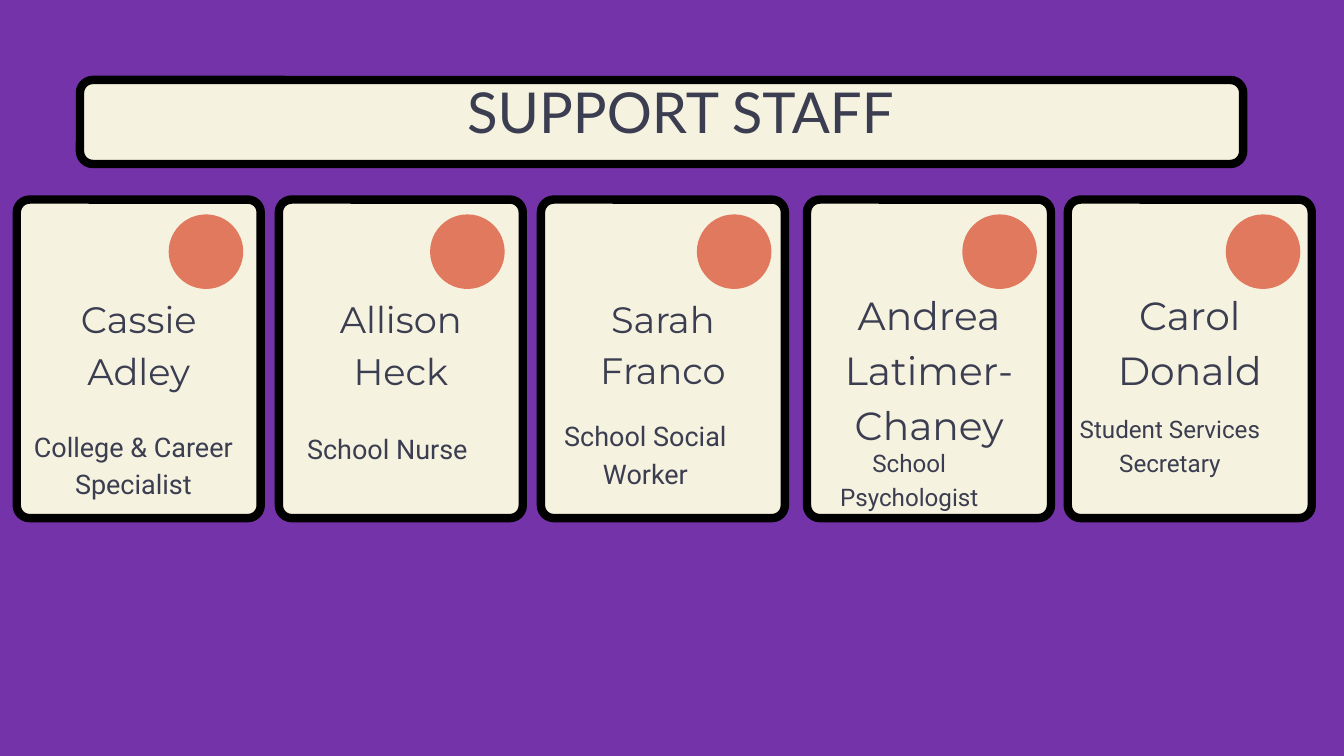
from collections import namedtuple

from pptx import Presentation
from pptx.dml.color import RGBColor
from pptx.enum.shapes import MSO_SHAPE as Shape
from pptx.enum.text import MSO_ANCHOR as Anchor, MSO_AUTO_SIZE as AutoSize, PP_ALIGN as Align
from pptx.util import Inches, Pt

PURPLE = RGBColor(0x75, 0x33, 0xA9)
CREAM = RGBColor(0xF5, 0xF2, 0xDF)
CORAL = RGBColor(0xE0, 0x79, 0x5D)
INK = RGBColor(0x3B, 0x3D, 0x50)
BLACK = RGBColor(0, 0, 0)

LEADING = 1.4  # line pitch as a multiple of the text size
CORNER = 0.19
FRAME_WIDTH = 9
DOT_SIZE = 1.11
CARD_TOP, CARD_WIDTH, CARD_HEIGHT = 2.97, 3.63, 4.74

Box = namedtuple("Box", "left top width height")
# The dot, name and role boxes are measured from the card's top left corner
Card = namedtuple("Card", "left dot name_text name_size name role_text role_size role")

SHORT_NAME = Box(0.65, 1.34, 2.33, 1.51)
LONG_NAME = Box(0.51, 1.25, 2.61, 2.4)

CARDS = [
    Card(0.25, 2.26, "Cassie Adley", 39.4, SHORT_NAME,
         "College & Career Specialist", 28.9, Box(0.1, 3.35, 3.27, 1.1)),
    Card(4.15, 2.25, "Allison Heck", 39.4, SHORT_NAME,
         "School Nurse", 28.9, Box(-0.02, 3.39, 3.27, 0.54)),
    Card(8.05, 2.32, "Sarah Franco", 39.3, SHORT_NAME,
         "School Social Worker", 28.9, Box(-0.08, 3.19, 3.27, 1.1)),
    Card(12.01, 2.31, "Andrea Latimer-Chaney", 42, LONG_NAME,
         "School Psychologist", 25.9, Box(0.06, 3.63, 2.92, 0.99)),
    Card(15.89, 2.35, "Carol Donald", 42, LONG_NAME._replace(height=1.59),
         "Student Services Secretary", 25.9, Box(0.06, 3.12, 2.92, 0.99)),
]


def emu(box):
    return [Inches(length) for length in box]


def within(card_box, part):
    return part._replace(left=card_box.left + part.left, top=card_box.top + part.top)


def add_panel(slide, box):
    """Cream rounded panel with a thick black frame."""
    panel = slide.shapes.add_shape(Shape.ROUNDED_RECTANGLE, *emu(box))
    panel.adjustments[0] = CORNER / min(box.width, box.height)
    panel.shadow.inherit = False
    panel.fill.solid()
    panel.fill.fore_color.rgb = CREAM
    panel.line.color.rgb = BLACK
    panel.line.width = Pt(FRAME_WIDTH)


def add_dot(slide, box):
    dot = slide.shapes.add_shape(Shape.OVAL, *emu(box))
    dot.shadow.inherit = False
    dot.fill.solid()
    dot.fill.fore_color.rgb = CORAL
    dot.line.fill.background()


def write_text(holder, text, font_name, size):
    """Centred text that starts at the top of its holder, without margins."""
    frame = holder.text_frame
    frame.word_wrap = True
    frame.auto_size = AutoSize.NONE
    frame.vertical_anchor = Anchor.TOP
    frame.margin_left = frame.margin_top = frame.margin_right = frame.margin_bottom = 0
    paragraph = frame.paragraphs[0]
    paragraph.alignment = Align.CENTER
    paragraph.line_spacing = Pt(size * LEADING)
    paragraph.space_before = Pt(0)
    run = paragraph.add_run()
    run.text = text
    run.font.name = font_name
    run.font.size = Pt(size)
    run.font.color.rgb = INK


def add_label(slide, box, text, font_name, size):
    write_text(slide.shapes.add_textbox(*emu(box)), text, font_name, size)


def add_banner(slide, box):
    add_panel(slide, box)
    title = slide.shapes.title
    title.left, title.top, title.width, title.height = emu(
        Box(box.left + 0.81, box.top - 0.21, 16.25, 1.33))
    write_text(title, "SUPPORT STAFF", "Lato", 60.4)
    # Bring the title in front of its panel
    slide.shapes._spTree.append(title._element)


def add_card(slide, box, card):
    add_panel(slide, box)
    add_dot(slide, within(box, Box(card.dot, 0.22, DOT_SIZE, DOT_SIZE)))
    add_label(slide, within(box, card.name), card.name_text, "Montserrat", card.name_size)
    add_label(slide, within(box, card.role), card.role_text, "Roboto", card.role_size)


def main():
    prs = Presentation()
    prs.slide_width, prs.slide_height = Inches(20), Inches(11.25)
    slide = prs.slides.add_slide(prs.slide_layouts[5])
    slide.background.fill.solid()
    slide.background.fill.fore_color.rgb = PURPLE

    # Heading
    add_banner(slide, Box(1.19, 1.19, 17.31, 1.25))

    # Staff cards
    for card in CARDS:
        add_card(slide, Box(card.left, CARD_TOP, CARD_WIDTH, CARD_HEIGHT), card)

    prs.save("out.pptx")


if __name__ == "__main__":
    main()
